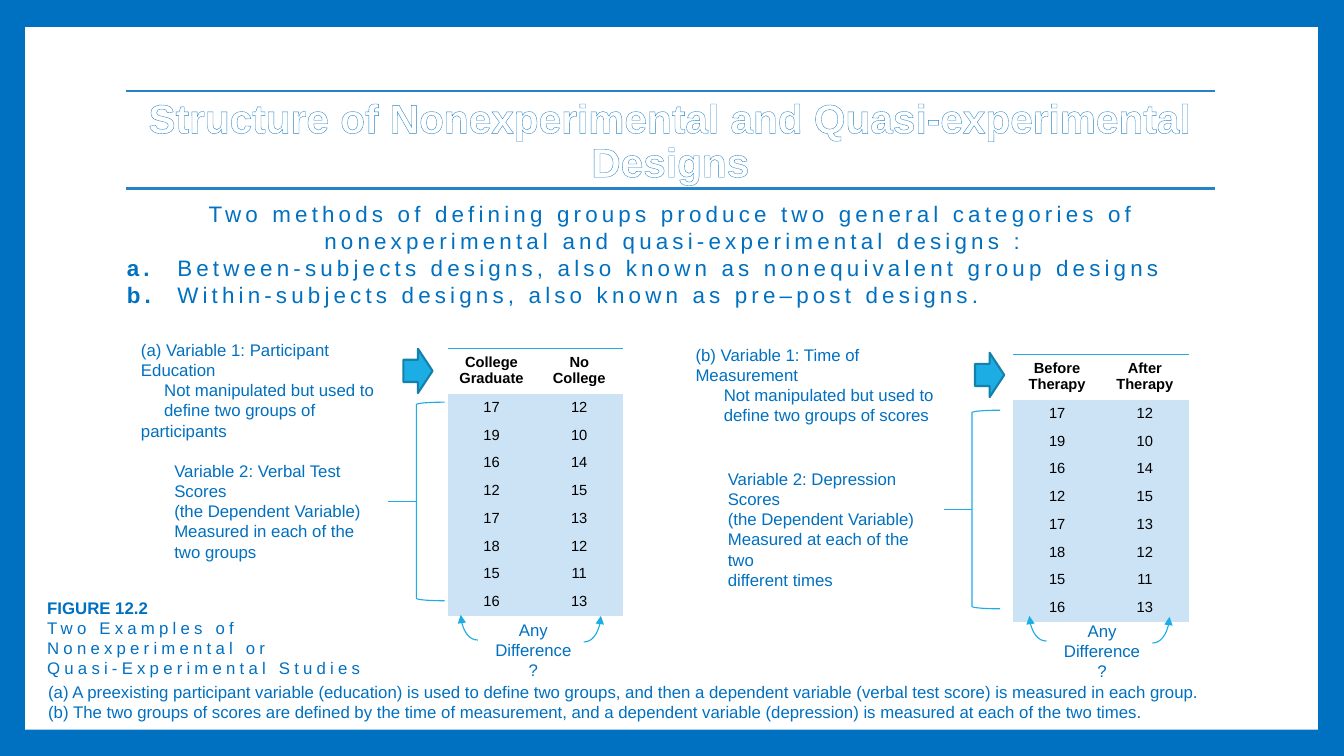
from lxml import etree
from pptx import Presentation
from pptx.dml.color import RGBColor
from pptx.enum import shapes, text
from pptx.oxml import ns
from pptx.util import Inches, Pt

BLUE = RGBColor(0x00, 0x70, 0xC0)
RULE = RGBColor(0x26, 0x83, 0xC6)
CYAN = RGBColor(0x1C, 0xAD, 0xE4)
ARROW_EDGE = RGBColor(0x15, 0x80, 0xA9)
PALE = RGBColor(0xCC, 0xE3, 0xF5)
WHITE = RGBColor(0xFF, 0xFF, 0xFF)
BLACK = RGBColor(0x00, 0x00, 0x00)
NO_STYLE = "{2D5ABB26-0587-4C30-8999-92F81FD0307C}"
CENTER, LEFT = text.PP_ALIGN.CENTER, text.PP_ALIGN.LEFT

SCORES = [(17, 12), (19, 10), (16, 14), (12, 15), (17, 13), (18, 12), (15, 11), (16, 13)]
STUDIES = [
    {
        "group": ["(a) Variable 1: Participant Education", "Not manipulated but used to",
                  "define two groups of participants"],
        "group_box": (1.25, 3.32, 2.75, 0.71), "group_indent": 0.23,
        "measure": ["Variable 2: Verbal Test Scores", "(the Dependent Variable)",
                    "Measured in each of the", "two groups"],
        "measure_box": (1.58, 4.52, 2.28, 0.91),
        "headings": ["College Graduate", "No College"],
        "table_box": (4.44, 3.46, 1.74, 2.65),
        "arrow_box": (4, 3.46, 0.29, 0.44),
        "bracket_box": (4.13, 3.99, 0.28, 1.97),
        "question_box": (4.74, 6.1, 1.05, 0.5),
    },
    {
        "group": ["(b) Variable 1: Time of Measurement", "Not manipulated but used to",
                  "define two groups of scores"],
        "group_box": (6.75, 3.37, 2.89, 0.71), "group_indent": 0.28,
        "measure": ["Variable 2: Depression Scores", "(the Dependent Variable)",
                    "Measured at each of the two", "different times"],
        "measure_box": (7.07, 4.6, 2.28, 0.91),
        "headings": ["Before\nTherapy", "After\nTherapy"],
        "table_box": (10.05, 3.52, 1.74, 2.65),
        "arrow_box": (9.67, 3.5, 0.29, 0.44),
        "bracket_box": (9.64, 4.07, 0.28, 1.97),
        "question_box": (10.38, 6.11, 1.05, 0.5),
    },
]


def inches(box):
    """Convert a sequence of numbers to lengths."""
    return [Inches(value) for value in box]


def style(paragraph, size, color, bold=False, align=LEFT):
    """Set the font and alignment of a whole paragraph."""
    paragraph.alignment = align
    font = paragraph.font
    font.name, font.size, font.bold = "Arial", Pt(size), bold
    font.color.rgb = color


def indent(paragraph, margin, first=0):
    """Set the left margin and first-line indent of a paragraph."""
    properties = paragraph._p.get_or_add_pPr()
    properties.set("marL", str(Inches(margin)))
    properties.set("indent", str(Inches(first)))


def track(run, points):
    """Widen the spacing between the letters of a run."""
    run._r.get_or_add_rPr().set("spc", str(points * 100))


def add_text(slide, box, lines, size=12, align=LEFT):
    """Add a wrapped text box and return its paragraphs."""
    frame = slide.shapes.add_textbox(*inches(box)).text_frame
    frame.word_wrap = True
    frame.text = "\n".join(lines)
    for paragraph in frame.paragraphs:
        style(paragraph, size, BLUE, align=align)
        indent(paragraph, 0.05)
    return frame.paragraphs


def add_shape(slide, kind, box, fill=None, line=None, width=1):
    """Add a preset shape without shadow."""
    shape = slide.shapes.add_shape(kind, *inches(box))
    shape.shadow.inherit = False
    for part, color in ((shape.fill, fill), (shape.line.fill, line)):
        if color is None:
            part.background()
        else:
            part.solid()
            part.fore_color.rgb = color
    if line is not None:
        shape.line.width = Pt(width)
    return shape


def add_line(slide, start, end, color=CYAN, width=0.79, curved=False):
    """Add a straight line, or a quarter curve with an arrowhead at its end."""
    kind = shapes.MSO_CONNECTOR.CURVE if curved else shapes.MSO_CONNECTOR.STRAIGHT
    connector = slide.shapes.add_connector(kind, *inches(start + end))
    connector.line.color.rgb = color
    connector.line.width = Pt(width)
    properties = connector.element.spPr
    if curved:
        properties.find(ns.qn("a:prstGeom")).set("prst", "curvedConnector2")
        line = properties.find(ns.qn("a:ln"))
        etree.SubElement(line, ns.qn("a:tailEnd"), type="triangle")
    etree.SubElement(properties, ns.qn("a:effectLst"))


def add_background(slide):
    """Draw the blue frame around a white panel."""
    slide.background.fill.solid()
    slide.background.fill.fore_color.rgb = BLUE
    panel = add_shape(slide, shapes.MSO_SHAPE.RECTANGLE, (0.25, 0.27, 12.82, 6.97), WHITE)
    slide.shapes.title.element.addprevious(panel.element)


def add_title(slide, box):
    """Place the outlined title between two rules."""
    left, top, width, height = box
    title = slide.shapes.title
    title.left, title.top, title.width, title.height = inches(box)
    frame = title.text_frame
    frame.text = "Structure of Nonexperimental and Quasi-experimental Designs"
    frame.word_wrap = True
    frame.vertical_anchor = text.MSO_ANCHOR.MIDDLE
    paragraph = frame.paragraphs[0]
    style(paragraph, 29, WHITE, True, CENTER)
    paragraph.line_spacing = 0.9
    outline = etree.Element(ns.qn("a:ln"), w=str(Pt(0.52)))
    fill = etree.SubElement(outline, ns.qn("a:solidFill"))
    etree.SubElement(fill, ns.qn("a:srgbClr"), val=str(RULE))
    paragraph.runs[0]._r.get_or_add_rPr().insert(0, outline)
    for y in (top + 0.23, top + 1.2):
        add_line(slide, (left, y), (left + width, y), RULE, 1.5)


def add_introduction(slide, box):
    """Write the introduction and its two lettered designs."""
    paragraphs = add_text(slide, box, [
        "Two methods of defining groups produce two general categories of "
        "nonexperimental and quasi-experimental designs :", "", ""], 16)
    paragraphs[0].alignment = CENTER
    designs = [("a.", "Between-subjects designs, also known as nonequivalent group designs"),
               ("b.", "Within-subjects designs, also known as pre–post designs.")]
    for paragraph, (letter, design) in zip(paragraphs[1:], designs):
        indent(paragraph, 0.55, -0.5)
        for words, bold in ((letter + "\t", True), (design, False)):
            run = paragraph.add_run()
            run.text, run.font.bold = words, bold
    for paragraph in paragraphs:
        for run in paragraph.runs:
            track(run, 3)


def add_scores(slide, box, headings):
    """Add the table of scores under two headings."""
    rows = [headings] + SCORES
    table = slide.shapes.add_table(len(rows), 2, *inches(box)).table
    table._tbl.tblPr[0].text = NO_STYLE
    table.first_row = table.horz_banding = False
    for r, values in enumerate(rows):
        table.rows[r].height = Inches(0.275 if r else 0.45)
        for c, value in enumerate(values):
            cell = table.cell(r, c)
            cell.text = str(value)
            for paragraph in cell.text_frame.paragraphs:
                style(paragraph, 10.5, BLACK, r == 0, CENTER)
            if r:
                cell.fill.solid()
                cell.fill.fore_color.rgb = PALE
            else:
                border = etree.Element(ns.qn("a:lnT"), w=str(Pt(1)))
                fill = etree.SubElement(border, ns.qn("a:solidFill"))
                etree.SubElement(fill, ns.qn("a:srgbClr"), val=str(CYAN))
                cell._tc.get_or_add_tcPr().insert(0, border)


def add_bracket(slide, box):
    """Draw a bracket with a stem pointing to the measured variable."""
    left, top, width, height = box
    add_shape(slide, shapes.MSO_SHAPE.LEFT_BRACKET, box, line=CYAN, width=0.79)
    middle = top + height / 2
    add_line(slide, (left, middle), (left - width, middle))


def add_question(slide, box):
    """Ask for a difference, with curved arrows up to both columns."""
    left, top, width, height = box
    right = left + width
    add_text(slide, box, ["Any", "Difference?"], align=CENTER)
    add_line(slide, (left, top + 0.25), (left - 0.17, top), curved=True)
    add_line(slide, (right, top + 0.27), (right + 0.17, top + 0.01), curved=True)


def add_study(slide, study):
    """Draw one example study with its labels and scores."""
    add_scores(slide, study["table_box"], study["headings"])
    add_bracket(slide, study["bracket_box"])
    add_text(slide, study["measure_box"], study["measure"])
    for paragraph in add_text(slide, study["group_box"], study["group"])[1:]:
        indent(paragraph, 0.05, study["group_indent"])
    add_shape(slide, shapes.MSO_SHAPE.RIGHT_ARROW, study["arrow_box"], CYAN, ARROW_EDGE, 1.5)
    add_question(slide, study["question_box"])


def add_caption(slide, box):
    """Write the figure number, its name and the explanation below."""
    left, top, width, height = box
    paragraphs = add_text(slide, (left, top, 3.66, 0.91), [
        "FIGURE 12.2", "Two Examples of Nonexperimental or", "Quasi-Experimental Studies"])
    paragraphs[0].font.bold = True
    for paragraph in paragraphs[1:]:
        track(paragraph.runs[0], 3)
    add_text(slide, (left + 0.01, top + 0.83, width, 0.5), [
        "(a) A preexisting participant variable (education) is used to define two groups, "
        "and then a dependent variable (verbal test score) is measured in each group.",
        "(b) The two groups of scores are defined by the time of measurement, "
        "and a dependent variable (depression) is measured at each of the two times."])


def main():
    """Build the slide and save it."""
    presentation = Presentation()
    presentation.slide_width, presentation.slide_height = inches((13.33, 7.5))
    slide = presentation.slides.add_slide(presentation.slide_layouts[5])
    add_background(slide)
    add_title(slide, (1.25, 0.67, 10.8, 1.48))
    add_introduction(slide, (1.11, 1.94, 11.08, 1.18))
    for study in STUDIES:
        add_study(slide, study)
    add_caption(slide, (0.32, 5.88, 11.97, 1.33))
    presentation.save("out.pptx")


if __name__ == "__main__":
    main()
